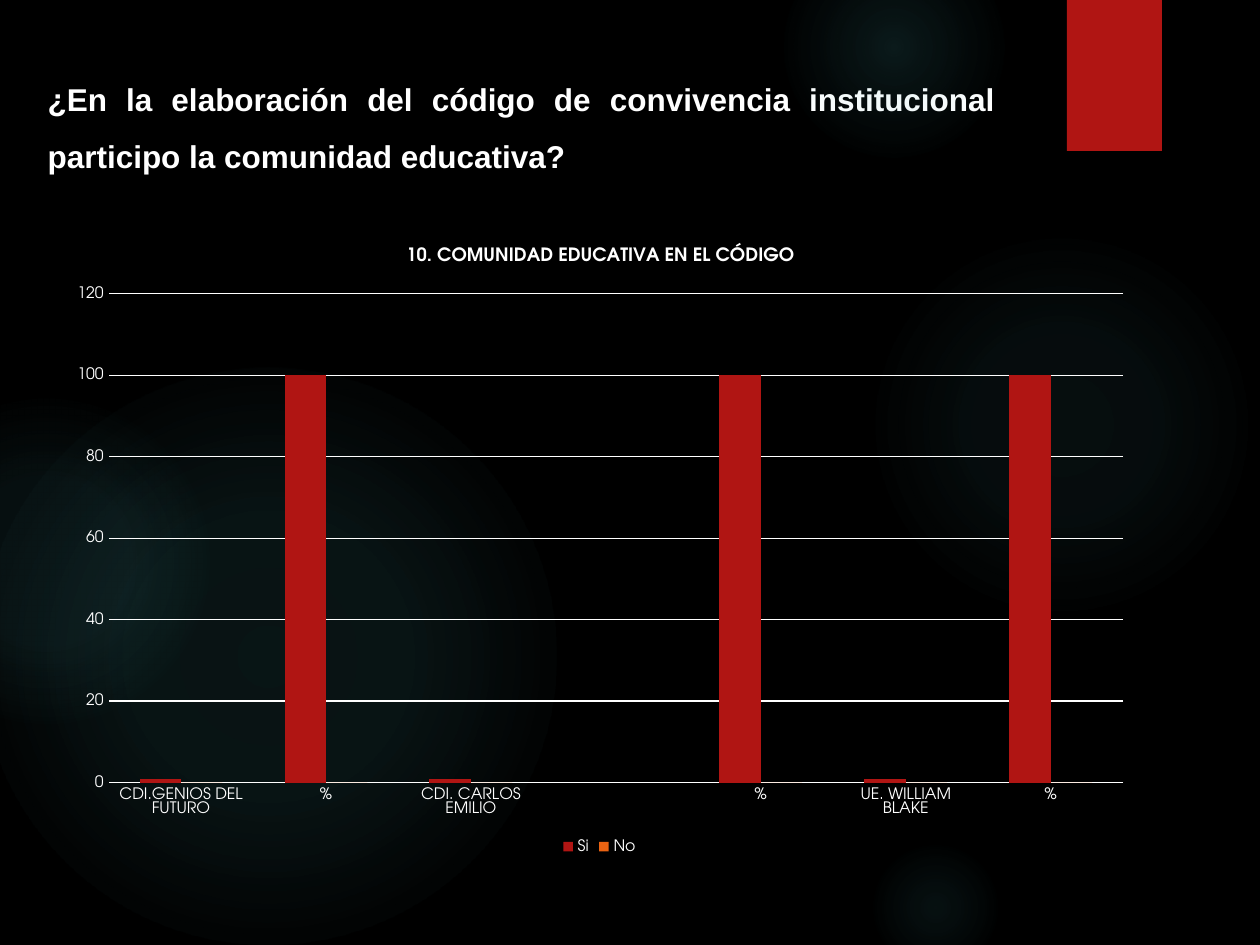
"""Builds the survey slide on who took part in the school code."""
from lxml.etree import SubElement as Sub
from pptx import Presentation
from pptx.chart.data import CategoryChartData as Data
from pptx.dml.color import RGBColor as RGB
from pptx.enum.chart import XL_CHART_TYPE as Kind, XL_LEGEND_POSITION as Spot, XL_TICK_MARK as Tick
from pptx.enum.shapes import MSO_SHAPE as Form
from pptx.enum.text import MSO_ANCHOR as Anchor, PP_ALIGN as Align
from pptx.oxml.ns import qn
from pptx.util import Pt

PX = 914400 // 126
BLACK, WHITE = RGB(0, 0, 0), RGB(255, 255, 255)
RED, ORANGE, TEAL = RGB(0xB0, 0x15, 0x13), RGB(0xEA, 0x63, 0x12), RGB(0x50, 0xB9, 0xC1)
SANS, GEO = "Arial", "TeX Gyre Adventor"

HEAD = "¿En la elaboración del código de convivencia institucional participo la comunidad educativa?"
NAME = "10. COMUNIDAD EDUCATIVA EN EL CÓDIGO"
CATS = ["CDI.GENIOS DEL FUTURO", "%", "CDI. CARLOS EMILIO", "", "%", "UE. WILLIAM BLAKE", "%"]
ROWS = [
    ("Si", RED, [1, 100, 1, None, 100, 1, 100]),
    ("No", ORANGE, [0, 0, 0, None, 0, 0, 0]),
]
GLOWS = [
    (868, 231, 388, [(0, 7), (36, 6), (69, 0)]),
    (784, -63, 220, [(0, 14), (36, 7), (73, 0)]),
    (868, 840, 136, [(0, 9), (36, 5), (66, 0)]),
    (-21, 368, 577, [(0, 11), (36, 10), (75, 0)]),
    (-116, 399, 325, [(0, 8), (36, 8), (72, 0)]),
]


def box(*px):
    return [n * PX for n in px]


def style(font, size, face=GEO, bold=False):
    font.size, font.name, font.bold = Pt(size), face, bold
    font.color.rgb = WHITE


def write(frame, text, size, face=GEO, bold=False, align=None, lines=None, after=None):
    para = frame.paragraphs[0]
    para.alignment, para.line_spacing = align, lines
    if after is not None:
        para.space_after = Pt(after)
    run = para.add_run()
    run.text = text
    style(run.font, size, face, bold)


def draw(slide, form, *px):
    shape = slide.shapes.add_shape(form, *box(*px))
    shape.shadow.inherit = False
    shape.line.fill.background()
    return shape


def glow(slide, x, y, size, stops):
    props = draw(slide, Form.OVAL, x, y, size, size).element.spPr
    grad = props.makeelement(qn("a:gradFill"), {"rotWithShape": "1"})
    props.find(qn("a:prstGeom")).addnext(grad)
    items = Sub(grad, qn("a:gsLst"))
    for pos, alpha in stops:
        stop = Sub(items, qn("a:gs"), pos=str(pos * 1000))
        tint = Sub(stop, qn("a:srgbClr"), val=str(TEAL))
        Sub(tint, qn("a:alpha"), val=str(alpha * 1000))
    ring = Sub(grad, qn("a:path"), {"path": "circle"})
    Sub(ring, qn("a:fillToRect"), {side: "50000" for side in "ltrb"})


def place(plot, **parts):
    old = plot.find(qn("c:layout"))
    if old is None:
        old = plot.makeelement(qn("c:layout"), {})
        text = plot.find(qn("c:tx"))
        if text is None:
            plot.insert(0, old)
        else:
            text.addnext(old)
    spot = Sub(old, qn("c:manualLayout"))
    if "w" in parts:
        Sub(spot, qn("c:layoutTarget"), val="inner")
    for key in "xy":
        Sub(spot, qn(f"c:{key}Mode"), val="edge")
    for key, val in parts.items():
        Sub(spot, qn(f"c:{key}"), val=str(val))


def graph(slide):
    data = Data()
    data.categories = CATS
    for name, tint, vals in ROWS:
        data.add_series(name, vals)
    chart = slide.shapes.add_chart(Kind.COLUMN_CLUSTERED, *box(54, 224, 1091, 635), data).chart
    style(chart.font, 10)
    chart.has_title = True
    write(chart.chart_title.text_frame, NAME, 10.5, bold=True)
    chart.chart_title.include_in_layout = False
    chart.has_legend = True
    chart.legend.position = Spot.BOTTOM
    chart.legend.include_in_layout = False
    style(chart.legend.font, 9)
    plot = chart.plots[0]
    plot.gap_width, plot.overlap, plot.vary_by_categories = 150, 0, False
    for item, (name, tint, vals) in zip(plot.series, ROWS):
        item.format.fill.solid()
        item.format.fill.fore_color.rgb = tint
        item.invert_if_negative = False
    for axis in (chart.category_axis, chart.value_axis):
        axis.major_tick_mark = axis.minor_tick_mark = Tick.NONE
        axis.format.line.fill.background()
        style(axis.tick_labels.font, 9)
    axis.minimum_scale, axis.maximum_scale, axis.major_unit = 0, 120, 20
    axis.has_major_gridlines = True
    grid = axis.major_gridlines.format.line
    grid.color.rgb, grid.width = WHITE, Pt(0.75)
    area = chart.element.find(qn("c:chart"))
    place(area.find(qn("c:title")), x=0.32, y=0.03)
    place(area.find(qn("c:plotArea")), x=0.05, y=0.11, w=0.93, h=0.77)


def main():
    deck = Presentation()
    deck.slide_width, deck.slide_height = box(1260, 945)
    slide = deck.slides.add_slide(deck.slide_layouts[5])
    back = slide.background.fill
    back.solid()
    back.fore_color.rgb = BLACK
    for item in GLOWS:
        glow(slide, *item)
    flag = draw(slide, Form.RECTANGLE, 1067, 0, 95, 151)
    flag.fill.solid()
    flag.fill.fore_color.rgb = RED
    title = slide.shapes.title
    title.left, title.top, title.width, title.height = box(35, 55, 973, 121)
    title.text_frame.vertical_anchor = Anchor.TOP
    title.text_frame.word_wrap = True
    write(title.text_frame, HEAD, 18, SANS, True, Align.JUSTIFY, 1.5, 10)
    graph(slide)
    deck.save("out.pptx")


if __name__ == "__main__":
    main()
